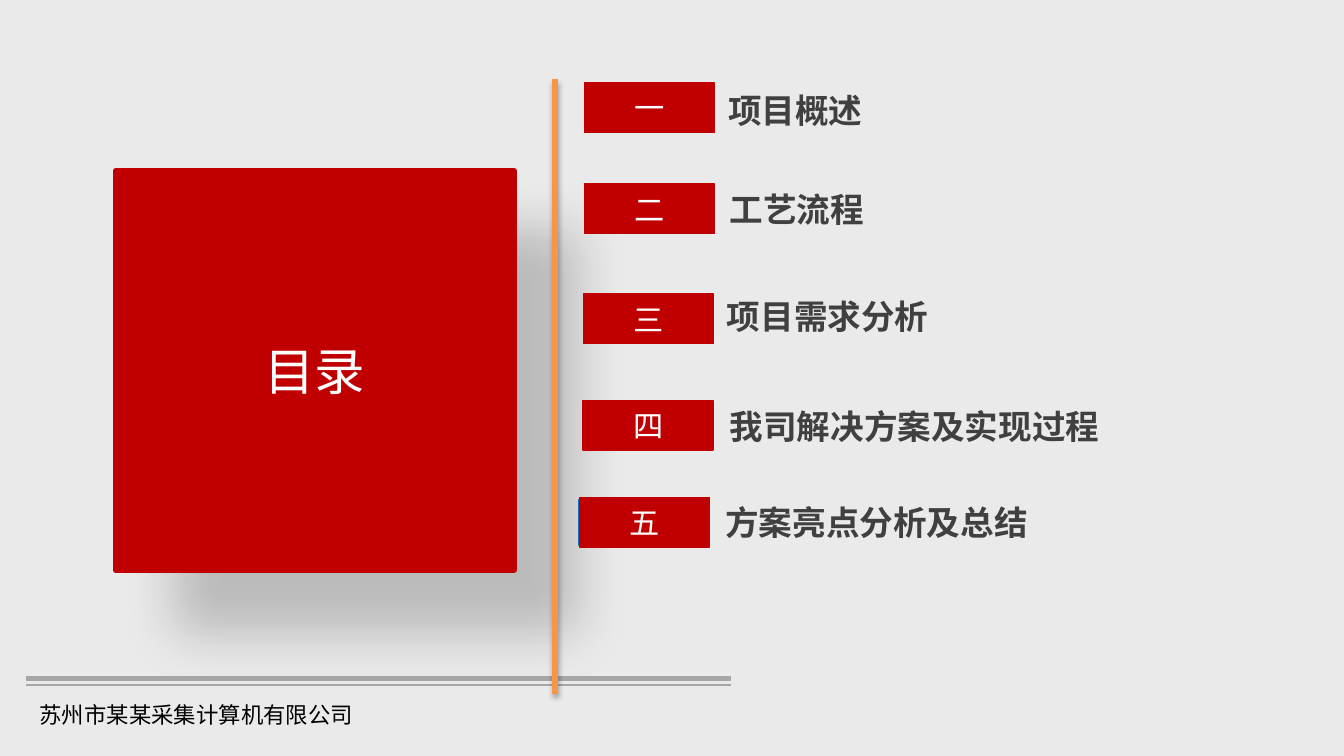
from dataclasses import dataclass

from lxml.etree import SubElement
from pptx import Presentation
from pptx.dml.color import RGBColor
from pptx.enum.shapes import MSO_CONNECTOR, MSO_SHAPE
from pptx.enum.text import MSO_ANCHOR, MSO_AUTO_SIZE, PP_ALIGN
from pptx.oxml.ns import qn
from pptx.util import Cm, Pt

CJK_FONT = "Noto Sans CJK SC"
RED, BLUE, ORANGE, GRAY = "C00000", "0975C2", "F79646", "A6A6A6"
WHITE, BLACK, DARK, BACKGROUND = "FFFFFF", "000000", "404040", "EAEAEA"


@dataclass
class Entry:
    number: str
    label: str
    badge_left: float
    badge_top: float
    label_left: float
    label_top: float


@dataclass
class Shadow:
    opacity: int
    blur: float
    distance: float
    angle: int


ENTRIES = [
    Entry("一", "项目概述", 11.05, 1.57, 13.51, 1.57),
    Entry("二", "工艺流程", 11.05, 3.48, 13.54, 3.45),
    Entry("三", "项目需求分析", 11.03, 5.56, 13.49, 5.46),
    Entry("四", "我司解决方案及实现过程", 11.02, 7.57, 13.54, 7.54),
    Entry("五", "方案亮点分析及总结", 10.95, 9.4, 13.46, 9.37),
]


def color(value: str) -> RGBColor:
    return RGBColor.from_string(value)


def paint(shape, fill: str, line: str, width: float) -> None:
    shape.fill.solid()
    shape.fill.fore_color.rgb = color(fill)
    shape.line.color.rgb = color(line)
    shape.line.width = Pt(width)


def set_effects(shape, shadow: Shadow | None = None) -> None:
    """Replace the theme effects with one outer shadow, or with none."""
    effects = SubElement(shape._element.spPr, qn("a:effectLst"))
    if shadow:
        outer = SubElement(effects, qn("a:outerShdw"), blurRad=str(Pt(shadow.blur)),
                           dist=str(Pt(shadow.distance)), dir=str(shadow.angle * 60000),
                           algn="tl", rotWithShape="0")
        tone = SubElement(outer, qn("a:srgbClr"), val=BLACK)
        SubElement(tone, qn("a:alpha"), val=str(shadow.opacity * 1000))


def write(shape, text: str, size: float, text_color: str, font: str = CJK_FONT,
          bold: bool = False, align: PP_ALIGN = PP_ALIGN.LEFT) -> None:
    shape.text_frame.text = text
    paragraph = shape.text_frame.paragraphs[0]
    paragraph.alignment = align
    run = paragraph.runs[0]
    run.font.size = Pt(size)
    run.font.bold = bold
    run.font.color.rgb = color(text_color)
    run.font.name = font
    SubElement(run.font._element, qn("a:ea"), typeface=CJK_FONT)


def place(shape, left: float, top: float, width: float, height: float) -> None:
    shape.left, shape.top = Cm(left), Cm(top)
    shape.width, shape.height = Cm(width), Cm(height)


def add_title_circle(slide) -> None:
    title = slide.shapes.title
    place(title, 2.18, 3.23, 7.54, 7.54)
    geometry = SubElement(title._element.spPr, qn("a:prstGeom"), prst="ellipse")
    SubElement(geometry, qn("a:avLst"))
    paint(title, RED, RED, 3)
    set_effects(title, Shadow(20, 29, 46, 45))
    frame = title.text_frame
    frame.auto_size = MSO_AUTO_SIZE.NONE
    frame.vertical_anchor = MSO_ANCHOR.MIDDLE
    frame.margin_left = frame.margin_right = 0
    write(title, "目录", 27, WHITE, font="Arial", align=PP_ALIGN.CENTER)


def add_line(slide, start: tuple[float, float], end: tuple[float, float],
             line_color: str, width: float, shadow: Shadow | None = None) -> None:
    line = slide.shapes.add_connector(MSO_CONNECTOR.STRAIGHT, *map(Cm, start + end))
    line.line.color.rgb = color(line_color)
    line.line.width = Pt(width)
    set_effects(line, shadow)


def add_label(slide, text: str, left: float, top: float, width: float, height: float,
              size: float, text_color: str, bold: bool = False) -> None:
    label = slide.shapes.add_textbox(*map(Cm, (left, top, width, height)))
    label.text_frame.word_wrap = False
    write(label, text, size, text_color, bold=bold)


def add_rectangle(slide, left: float, top: float, width: float, height: float,
                  fill: str, line_width: float):
    rectangle = slide.shapes.add_shape(MSO_SHAPE.RECTANGLE, *map(Cm, (left, top, width, height)))
    paint(rectangle, fill, fill, line_width)
    rectangle.shadow.inherit = False
    return rectangle


def add_entry(slide, entry: Entry) -> None:
    add_rectangle(slide, entry.badge_left, entry.badge_top + 0.06, 2.44, 0.84, BLUE, 1)
    badge = add_rectangle(slide, entry.badge_left, entry.badge_top, 2.46, 0.94, RED, 0.75)
    badge.text_frame.margin_top = badge.text_frame.margin_bottom = 0
    write(badge, entry.number, 16.2, WHITE, align=PP_ALIGN.CENTER)
    label_width = 0.51 + 0.64 * len(entry.label)
    add_label(slide, entry.label, entry.label_left, entry.label_top,
              label_width, 1.02, 18, DARK, bold=True)


def main() -> None:
    presentation = Presentation()
    presentation.slide_width, presentation.slide_height = Cm(25.4), Cm(14.29)
    slide = presentation.slides.add_slide(presentation.slide_layouts[5])
    slide.background.fill.solid()
    slide.background.fill.fore_color.rgb = color(BACKGROUND)

    add_title_circle(slide)
    for top, width in ((12.82, 2.75), (12.95, 0.75)):
        add_line(slide, (0.5, top), (13.82, top), GRAY, width)
    add_label(slide, "苏州市某某采集计算机有限公司", 0.5, 13.13, 13.26, 0.86, 12, BLACK)
    add_line(slide, (10.49, 13.11), (10.49, 1.5), ORANGE, 3, Shadow(35, 3.1, 1.8, 90))
    for entry in ENTRIES:
        add_entry(slide, entry)

    presentation.save("out.pptx")


if __name__ == "__main__":
    main()
